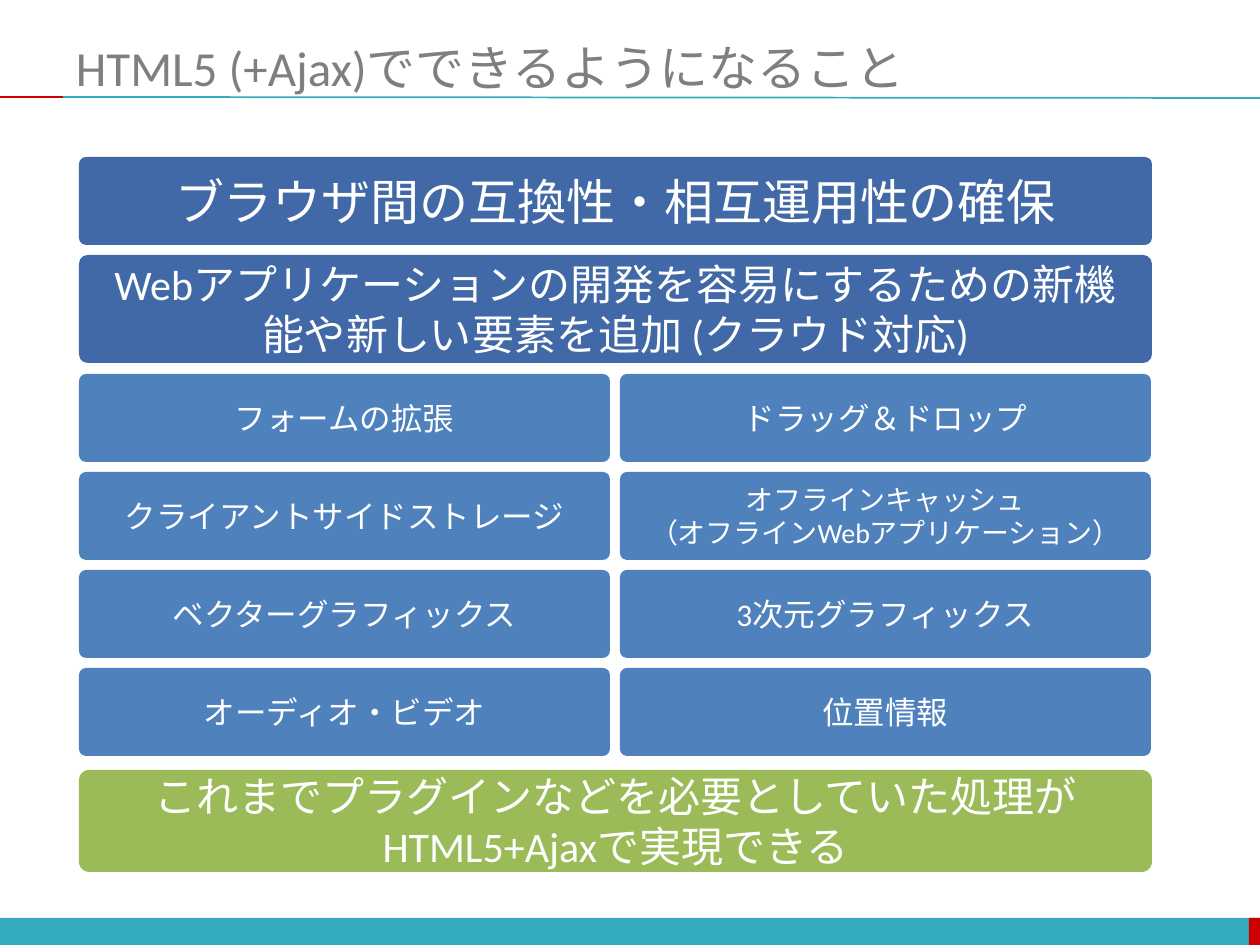
from dataclasses import dataclass

from lxml.etree import SubElement
from pptx import Presentation
from pptx.dml.color import RGBColor as Rgb
from pptx.enum.shapes import MSO_CONNECTOR as Link, MSO_SHAPE as Kind
from pptx.enum.text import MSO_ANCHOR as Anchor, PP_ALIGN as Align
from pptx.oxml.ns import qn
from pptx.util import Pt

SCALE = 914400 / 126


@dataclass(frozen=True)
class Theme:
    font: str = "Calibri"
    teal: str = "33ACBD"
    red: str = "CC0000"
    gray: str = "7F7F7F"
    navy: str = "4168A7"
    blue: str = "4F81BD"
    green: str = "9BBB59"
    white: str = "FFFFFF"
    head: int = 28
    large: int = 24
    body: int = 18
    small: int = 16


THEME = Theme()

# Paired features, row by row: (text, size)
GRID = [
    [("フォームの拡張", THEME.body), ("ドラッグ＆ドロップ", THEME.body)],
    [("クライアントサイドストレージ", THEME.body),
     ("オフラインキャッシュ\n（オフラインWebアプリケーション）", THEME.small)],
    [("ベクターグラフィックス", THEME.body), ("3次元グラフィックス", THEME.body)],
    [("オーディオ・ビデオ", THEME.body), ("位置情報", THEME.body)],
]
LEFT, WIDE, GAP = 79, 1073, 10
CELL = (WIDE - GAP) // 2
ROW, STEP = 88, 98


def px(*vals):
    return [round(v * SCALE) for v in vals]


def put(item, **vals):
    for name, val in vals.items():
        setattr(item, name, val)


def write(shape, text, size, color, align, inset):
    frame = shape.text_frame
    side, edge = px(inset, 0)
    put(frame, word_wrap=True, vertical_anchor=Anchor.MIDDLE,
        margin_left=side, margin_right=side, margin_top=edge, margin_bottom=edge)
    for i, line in enumerate(text.split("\n")):
        para = frame.add_paragraph() if i else frame.paragraphs[0]
        para.alignment = align
        run = para.add_run()
        run.text = line
        put(run.font, name=THEME.font, size=Pt(size))
        run.font.color.rgb = Rgb.from_string(color)


def block(slide, kind, box, fill):
    shape = slide.shapes.add_shape(kind, *px(*box))
    shape.shadow.inherit = False
    shape.fill.solid()
    shape.fill.fore_color.rgb = Rgb.from_string(fill)
    shape.line.fill.background()
    return shape


def card(slide, box, fill, text, size, curve=0.08):
    shape = block(slide, Kind.ROUNDED_RECTANGLE, box, fill)
    shape.adjustments[0] = curve
    write(shape, text, size, THEME.white, Align.CENTER, 15)


def rule(slide, ends, color):
    line = slide.shapes.add_connector(Link.STRAIGHT, *px(*ends))
    line.line.width = Pt(1)
    line.line.color.rgb = Rgb.from_string(color)
    SubElement(line._element.spPr, qn("a:effectLst"))


def main():
    deck = Presentation()
    deck.slide_width, deck.slide_height = px(1260, 945)
    slide = deck.slides.add_slide(deck.slide_layouts[6])

    # Footer bar and heading rules
    block(slide, Kind.RECTANGLE, (0, 918, 1260, 27), THEME.teal)
    block(slide, Kind.RECTANGLE, (1249, 918, 11, 27), THEME.red)
    rule(slide, (63, 97, 1260, 98), THEME.teal)
    rule(slide, (0, 97, 63, 97), THEME.red)

    # Title
    title = slide.shapes.add_textbox(*px(63, 38, 1197, 58))
    write(title, "HTML5 (+Ajax)でできるようになること",
          THEME.head, THEME.gray, Align.LEFT, 13)

    # Main goals
    card(slide, (LEFT, 157, WIDE, ROW), THEME.navy,
         "ブラウザ間の互換性・相互運用性の確保", THEME.head)
    card(slide, (LEFT, 255, WIDE, 108), THEME.navy,
         "Webアプリケーションの開発を容易にするための新機能や新しい要素を追加 (クラウド対応)",
         THEME.large)

    # Feature grid
    for r, row in enumerate(GRID):
        for c, (text, size) in enumerate(row):
            box = (LEFT + c * (CELL + GAP), 374 + r * STEP, CELL, ROW)
            card(slide, box, THEME.blue, text, size)

    # Conclusion
    card(slide, (LEFT, 770, WIDE, 102), THEME.green,
         "これまでプラグインなどを必要としていた処理がHTML5+Ajaxで実現できる",
         THEME.large, 0.1)

    deck.save("out.pptx")


if __name__ == "__main__":
    main()
